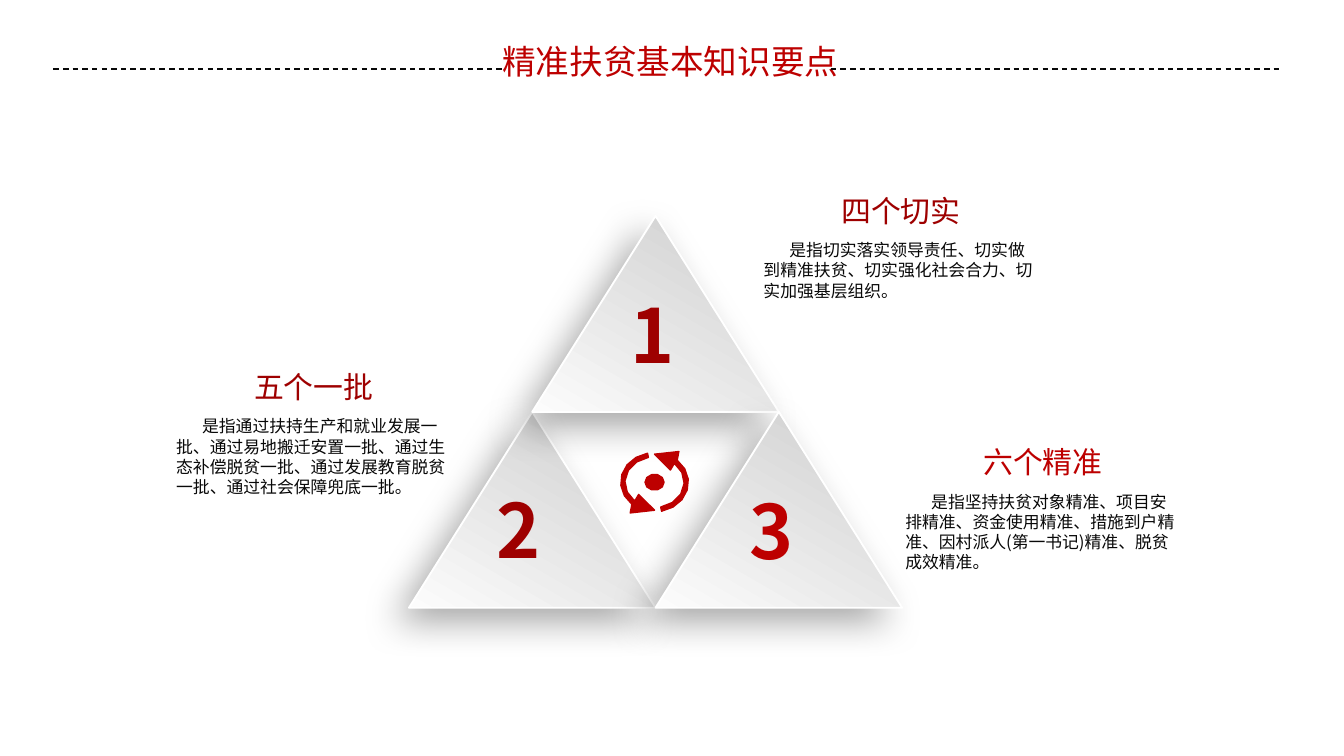
import math

import lxml.etree
import pptx
import pptx.dml.color
import pptx.enum.dml
import pptx.enum.shapes
import pptx.enum.text
import pptx.oxml.ns
import pptx.util

Cm = pptx.util.Cm
Pt = pptx.util.Pt
qn = pptx.oxml.ns.qn

FONT = "Noto Sans CJK SC"
DARK_RED, RED, INK = "9E0000", "BD0000", "080808"
TRIANGLE_WIDTH, TRIANGLE_HEIGHT = 4.66, 3.7
PYRAMID_LEFT, PYRAMID_TOP = 7.73, 4.08

# number, colour, column in half widths, row, left and top inset of the number
TRIANGLES = [
    ("2", DARK_RED, 0, 1, 1.41, 1.23),
    ("1", DARK_RED, 1, 0, 1.6, 1.26),
    ("3", RED, 2, 1, 1.53, 1.26),
]

# heading, colour, left, top, height, description
TOPICS = [
    ("四个切实", DARK_RED, 14.43, 4.53, 1.27,
     "是指切实落实领导责任、切实做到精准扶贫、切实强化社会合力、切实加强基层组织。"),
    ("六个精准", RED, 17.11, 9.28, 1.68,
     "是指坚持扶贫对象精准、项目安排精准、资金使用精准、措施到户精准、"
     "因村派人(第一书记)精准、脱贫成效精准。"),
    ("五个一批", DARK_RED, 3.33, 7.86, 1.68,
     "是指通过扶持生产和就业发展一批、通过易地搬迁安置一批、通过生态补偿脱贫一批、"
     "通过发展教育脱贫一批、通过社会保障兜底一批。"),
]


def rgb(value):
    return pptx.dml.color.RGBColor.from_string(value)


def write(frame, text, size, color, bold=False, align=pptx.enum.text.PP_ALIGN.LEFT):
    """Fill a text frame with one paragraph, for Latin and East Asian type alike."""
    frame.text = text
    frame.vertical_anchor = pptx.enum.text.MSO_ANCHOR.TOP
    paragraph = frame.paragraphs[0]
    paragraph.alignment = align
    font = paragraph.font
    font.name, font.size, font.bold = FONT, Pt(size), bold
    font.color.rgb = rgb(color)
    defaults = paragraph._p.pPr.find(qn("a:defRPr"))
    lxml.etree.SubElement(defaults, qn("a:ea"), typeface=FONT)
    return paragraph


def add_text_frame(slide, left, top, width, height, wrap, margins=None):
    """Add a text box; margins are left, top, right and bottom in cm."""
    frame = slide.shapes.add_textbox(Cm(left), Cm(top), Cm(width), Cm(height)).text_frame
    frame.word_wrap = wrap
    if margins:
        (frame.margin_left, frame.margin_top,
         frame.margin_right, frame.margin_bottom) = map(Cm, margins)
    return frame


def add_soft_shadow(shape):
    shape.shadow.inherit = False
    effects = shape._element.spPr.find(qn("a:effectLst"))
    shadow = lxml.etree.SubElement(
        effects, qn("a:outerShdw"), blurRad=str(Pt(20)), dist=str(Pt(10)),
        dir=str(136 * 60000), algn="ctr", rotWithShape="0")
    black = lxml.etree.SubElement(shadow, qn("a:srgbClr"), val="000000")
    lxml.etree.SubElement(black, qn("a:alpha"), val="34000")


def add_numbered_triangle(slide, number, color, column, row, inset_left, inset_top):
    left = PYRAMID_LEFT + column * TRIANGLE_WIDTH / 2
    top = PYRAMID_TOP + row * TRIANGLE_HEIGHT
    triangle = slide.shapes.add_shape(
        pptx.enum.shapes.MSO_SHAPE.ISOSCELES_TRIANGLE,
        Cm(left), Cm(top), Cm(TRIANGLE_WIDTH), Cm(TRIANGLE_HEIGHT))
    triangle.fill.gradient()
    triangle.fill.gradient_angle = 240
    for stop, position, shade in zip(triangle.fill.gradient_stops, (0, 1), ("CCCCCC", "FCFCFC")):
        stop.position = position
        stop.color.rgb = rgb(shade)
    triangle.line.color.rgb = rgb("FFFFFF")
    triangle.line.width = Pt(1)
    add_soft_shadow(triangle)
    frame = add_text_frame(slide, left + inset_left, top + inset_top, 1.4, 1.96, wrap=False)
    write(frame, number, 40, color, bold=True)


def add_topic(slide, heading, color, left, top, height, description):
    body = add_text_frame(slide, left, top, 5.33, height, True, (0, 0, 0.25, 0.13))
    paragraph = write(body, description, 9, INK)
    paragraph._p.pPr.set("indent", str(Cm(0.49)))
    title = add_text_frame(slide, left + 1.47, top - 0.89, 2.26, 0.69, False, (0, 0, 0, 0))
    write(title, heading, 16, color, align=pptx.enum.text.PP_ALIGN.CENTER)


def add_dashed_rule(slide, start, end, y):
    rule = slide.shapes.add_connector(
        pptx.enum.shapes.MSO_CONNECTOR.STRAIGHT, Cm(start), Cm(y), Cm(end), Cm(y))
    rule.line.color.rgb = rgb(INK)
    rule.line.width = Pt(0.75)
    rule.line.dash_style = pptx.enum.dml.MSO_LINE.DASH
    lxml.etree.SubElement(rule._element.spPr, qn("a:effectLst"))


def arc(radius_x, radius_y, start, end, steps):
    """Points on an ellipse round the origin, angles in degrees, clockwise."""
    angles = [math.radians(start + (end - start) * i / steps) for i in range(steps + 1)]
    return [(radius_x * math.cos(a), radius_y * math.sin(a)) for a in angles]


def add_cycle_icon(slide, center_x, center_y):
    """Draw a dot circled by two arrows, each the other turned by half."""
    arrow = (arc(0.64, 0.56, -48, 78, 6) + arc(0.56, 0.48, 78, -48, 5)
             + [(0.3, -0.23), (0, -0.53), (0.46, -0.58)])
    turned_arrow = [(-x, -y) for x, y in arrow]
    dot = arc(0.18, 0.15, 0, 360, 10)[:-1]
    contours = [[(Cm(center_x + x), Cm(center_y + y)) for x, y in contour]
                for contour in (dot, turned_arrow, arrow)]
    builder = slide.shapes.build_freeform(*contours[0][0])
    builder.add_line_segments(contours[0][1:], close=True)
    for contour in contours[1:]:
        builder.move_to(*contour[0])
        builder.add_line_segments(contour[1:], close=True)
    icon = builder.convert_to_shape()
    icon.shadow.inherit = False
    icon.fill.solid()
    icon.fill.fore_color.rgb = rgb(RED)
    icon.line.color.rgb = rgb(RED)
    icon.line.width = Pt(0.75)


def place_title(slide, text):
    title = slide.shapes.title
    title.left, title.top, title.width, title.height = Cm(9.24), Cm(0.64), Cm(7.37), Cm(1.02)
    write(title.text_frame, text, 18, RED)


def main():
    deck = pptx.Presentation()
    deck.slide_width, deck.slide_height = Cm(25.4), Cm(14.28)
    slide = deck.slides.add_slide(deck.slide_layouts.get_by_name("Title Only"))
    place_title(slide, "精准扶贫基本知识要点")
    for triangle in TRIANGLES:
        add_numbered_triangle(slide, *triangle)
    for topic in TOPICS:
        add_topic(slide, *topic)
    for start, end in ((15.7, 24.18), (1.01, 9.5)):
        add_dashed_rule(slide, start, end, 1.3)
    add_cycle_icon(slide, 12.37, 9.11)
    deck.save("out.pptx")


if __name__ == "__main__":
    main()
